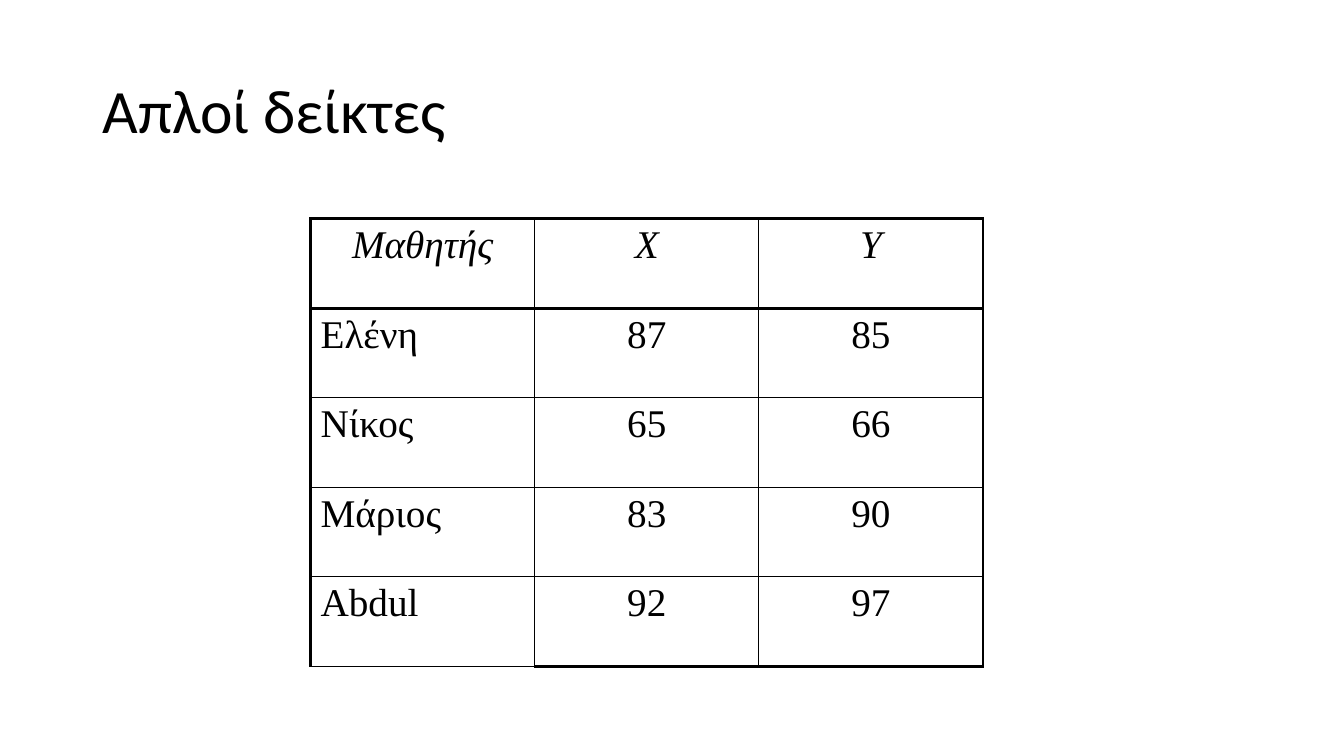
import pptx
import pptx.util
import pptx.dml.color
import pptx.enum.text
import pptx.oxml.ns
import lxml.etree as etree

Inches, Pt = pptx.util.Inches, pptx.util.Pt
ALIGN = pptx.enum.text.PP_ALIGN
ANCHOR = pptx.enum.text.MSO_ANCHOR

TITLE = "Απλοί δείκτες"
GRADES = [
    ("Μαθητής", "X", "Y"),
    ("Ελένη", "87", "85"),
    ("Νίκος", "65", "66"),
    ("Μάριος", "83", "90"),
    ("Abdul", "92", "97"),
]
COLORS = {"ink": "000000"}
THIN, THICK = 1, 2.25
LEFT, TOP, WIDTH, HEIGHT = 3.08, 2.17, 6.67, 4.44


def write(para, text, font, size, italic=False):
    run = para.add_run()
    run.text = text
    run.font.name = font
    run.font.size = Pt(size)
    run.font.italic = italic
    run.font.color.rgb = pptx.dml.color.RGBColor.from_string(COLORS["ink"])


def edges(row, col):
    """Border widths of a cell: thick around the table and under its header."""
    last_row, last_col = len(GRADES) - 1, len(GRADES[0]) - 1
    thick = {
        "L": col == 0,
        "R": col == last_col,
        "T": row <= 1,
        "B": row == 0 or (row == last_row and col > 0),
    }
    return {side: THICK if on else THIN for side, on in thick.items()}


def border(cell, widths):
    qn = pptx.oxml.ns.qn
    props = cell._tc.get_or_add_tcPr()
    for side, width in widths.items():
        line = etree.SubElement(props, qn("a:ln" + side), w=str(Pt(width)))
        fill = etree.SubElement(line, qn("a:solidFill"))
        etree.SubElement(fill, qn("a:srgbClr"), val=COLORS["ink"])


def add_title(slide):
    title = slide.shapes.title
    title.left, title.top = Inches(0.92), Inches(0.4)
    title.width, title.height = Inches(11.5), Inches(1.45)
    frame = title.text_frame
    frame.word_wrap = True
    frame.vertical_anchor = ANCHOR.MIDDLE
    para = frame.paragraphs[0]
    para.alignment = ALIGN.LEFT
    para.line_spacing = 0.9
    write(para, TITLE, "Calibri", 44)


def add_grades(slide):
    rows, cols = len(GRADES), len(GRADES[0])
    table = slide.shapes.add_table(
        rows, cols, Inches(LEFT), Inches(TOP), Inches(WIDTH), Inches(HEIGHT)
    ).table
    table.horz_banding = False
    for r, record in enumerate(GRADES):
        for c, text in enumerate(record):
            cell = table.cell(r, c)
            border(cell, edges(r, c))
            cell.fill.background()
            para = cell.text_frame.paragraphs[0]
            name = r > 0 and c == 0
            para.alignment = ALIGN.LEFT if name else ALIGN.CENTER
            write(para, text, "Times New Roman", 28, italic=r == 0)


def main():
    deck = pptx.Presentation()
    deck.slide_width, deck.slide_height = Inches(13.33), Inches(7.5)
    slide = deck.slides.add_slide(deck.slide_layouts.get_by_name("Title Only"))
    add_title(slide)
    add_grades(slide)
    deck.save("out.pptx")


if __name__ == "__main__":
    main()
